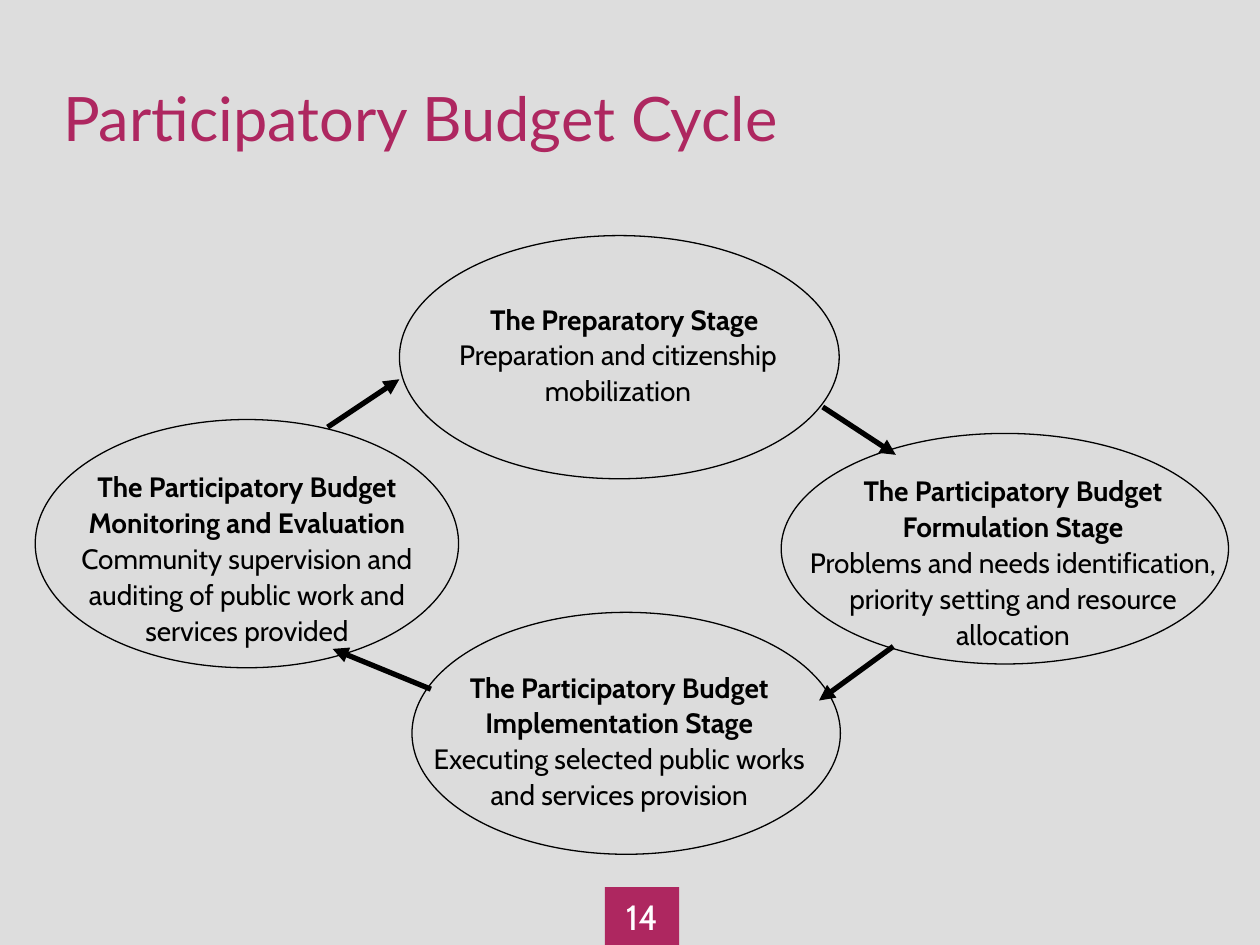
from pptx import Presentation, util as u
from pptx.dml.color import RGBColor
from pptx.enum import shapes, text
from pptx.oxml.ns import qn
from lxml import etree

COLORS = {"background": "DDDDDD", "oval": "DCDCDC", "accent": "AE2760",
          "ink": "000000", "white": "FFFFFF"}
TITLE = "Participatory Budget Cycle"
PAGE = "14"

# Boxes are left, top, width, height in inches
STAGES = [
    {"heading": "The Participatory Budget Monitoring and Evaluation",
     "detail": "Community supervision and auditing of public work and services provided",
     "oval": (0.28, 3.33, 3.36, 1.97), "label": (0.42, 3.66, 3.08, 1.81)},
    {"heading": "The Participatory Budget Implementation Stage",
     "detail": "Executing selected public works and services provision",
     "oval": (3.27, 4.86, 3.4, 1.92), "label": (3.33, 5.25, 3.17, 1.52)},
    {"heading": "The Preparatory Stage",
     "detail": "Preparation and citizenship mobilization",
     "oval": (3.17, 1.87, 3.49, 1.93), "label": (3.39, 2.33, 3.03, 1.52),
     "indent": 0.1},
    {"heading": "The Participatory Budget Formulation Stage",
     "detail": "Problems and needs identification, priority setting and resource allocation",
     "oval": (6.2, 3.44, 3.55, 1.83), "label": (6.33, 3.69, 3.42, 1.81)},
]
ARROWS = [(6.53, 3.23, 7.11, 3.61), (2.6, 3.39, 3.17, 3.01),
          (7.09, 5.13, 6.5, 5.56), (3.42, 5.47, 2.64, 5.15)]


def inches(values):
    return [u.Inches(value) for value in values]


def color(name):
    return RGBColor.from_string(COLORS[name])


def set_frame(frame, margin, **formats):
    for side in ("left", "top", "right", "bottom"):
        setattr(frame, f"margin_{side}", u.Inches(margin))
    for name, value in {"word_wrap": True, **formats}.items():
        setattr(frame, name, value)


def write(paragraph, words, ink, **formats):
    run = paragraph.add_run()
    run.text = words
    for name, value in formats.items():
        setattr(run.font, name, value)
    run.font.color.rgb = color(ink)


def add_figure(slide, kind, box, fill, outline=None):
    figure = slide.shapes.add_shape(kind, *inches(box))
    figure.shadow.inherit = False
    figure.fill.solid()
    figure.fill.fore_color.rgb = color(fill)
    if outline:
        figure.line.color.rgb = color(outline)
        figure.line.width = u.Pt(0.75)
    else:
        figure.line.fill.background()
    return figure


def add_arrow(slide, ends):
    arrow = slide.shapes.add_connector(shapes.MSO_CONNECTOR.STRAIGHT, *inches(ends))
    arrow.line.color.rgb = color("ink")
    arrow.line.width = u.Pt(3)
    etree.SubElement(arrow.line._get_or_add_ln(), qn("a:tailEnd"), type="triangle")
    etree.SubElement(arrow._element.spPr, qn("a:effectLst"))


def add_label(slide, stage):
    frame = slide.shapes.add_textbox(*inches(stage["label"])).text_frame
    set_frame(frame, 0.05)
    heading, detail = frame.paragraphs[0], frame.add_paragraph()
    for paragraph, part, bold in ((heading, "heading", True), (detail, "detail", False)):
        paragraph.alignment = text.PP_ALIGN.CENTER
        paragraph.line_spacing = 1.07
        write(paragraph, stage[part], "ink", name="Cabin", size=u.Pt(16), bold=bold)
    if "indent" in stage:
        heading._p.get_or_add_pPr().set("indent", str(u.Inches(stage["indent"])))


def main():
    deck = Presentation()
    deck.slide_width, deck.slide_height = inches((10, 7.5))
    slide = deck.slides.add_slide(deck.slide_layouts[5])
    slide.background.fill.solid()
    slide.background.fill.fore_color.rgb = color("background")

    title = slide.shapes.title
    title.left, title.top, title.width, title.height = inches((0.5, 0.58, 9, 0.64))
    set_frame(title.text_frame, 0, vertical_anchor=text.MSO_ANCHOR.BOTTOM,
              auto_size=text.MSO_AUTO_SIZE.NONE)
    heading = title.text_frame.paragraphs[0]
    heading.alignment = text.PP_ALIGN.LEFT
    write(heading, TITLE, "accent", name="Lato", size=u.Pt(35))

    badge = add_figure(slide, shapes.MSO_SHAPE.RECTANGLE, (4.8, 7.04, 0.59, 0.47), "accent")
    set_frame(badge.text_frame, 0.05, vertical_anchor=text.MSO_ANCHOR.MIDDLE)
    number = badge.text_frame.paragraphs[0]
    number.alignment = text.PP_ALIGN.CENTER
    write(number, PAGE, "white", name="Cabin", size=u.Pt(20))

    for stage in STAGES:
        add_figure(slide, shapes.MSO_SHAPE.OVAL, stage["oval"], "oval", "ink")
    for ends in ARROWS:
        add_arrow(slide, ends)
    for stage in STAGES:
        add_label(slide, stage)
    deck.save("out.pptx")


if __name__ == "__main__":
    main()
